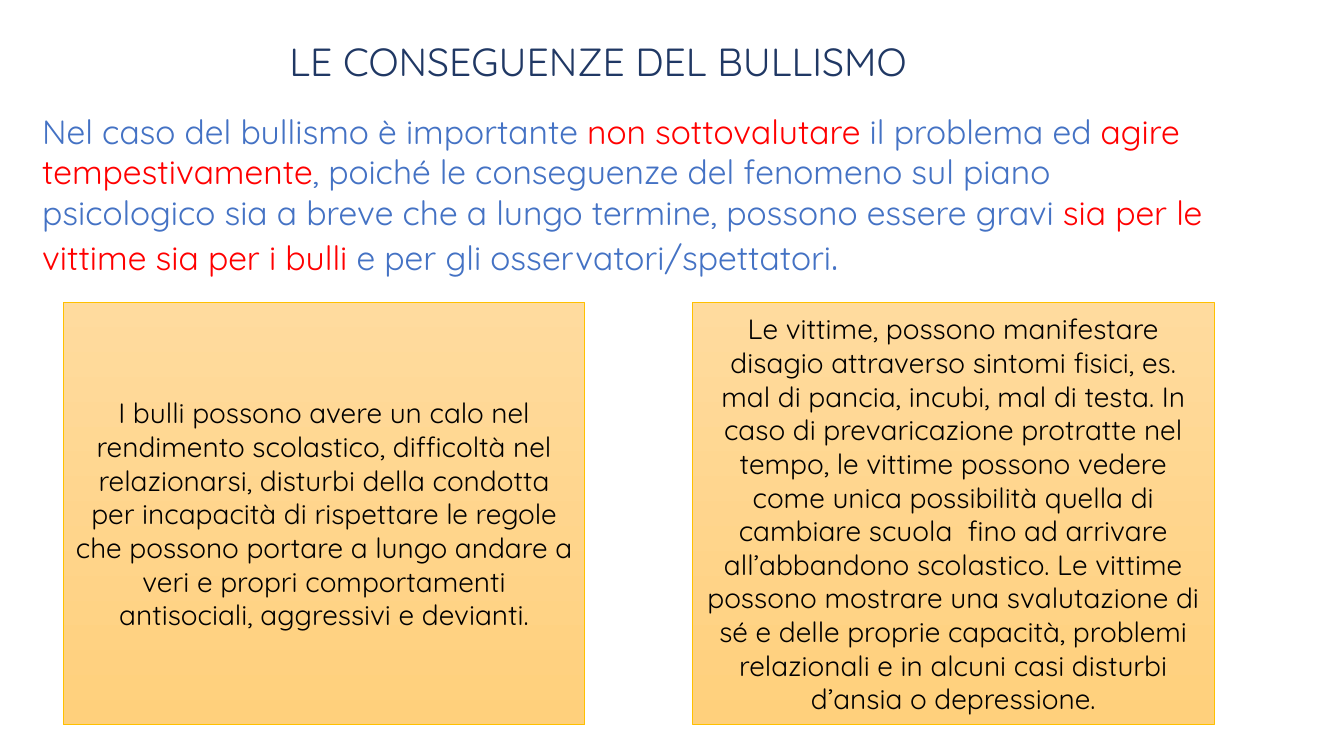
from pptx import Presentation
from pptx.dml.color import RGBColor
from pptx.enum.shapes import MSO_SHAPE
from pptx.enum.text import MSO_ANCHOR, MSO_AUTO_SIZE, PP_ALIGN
from pptx.util import Inches, Pt

RECTANGLE = MSO_SHAPE.RECTANGLE
LEFT, CENTER = PP_ALIGN.LEFT, PP_ALIGN.CENTER
TOP, MIDDLE = MSO_ANCHOR.TOP, MSO_ANCHOR.MIDDLE
NO_AUTOFIT = MSO_AUTO_SIZE.NONE
TITLE_ONLY = 5

FONT = "Quicksand"
NAVY, BLUE, RED, BLACK = "203864", "4472C4", "FF0000", "000000"
GRADIENT = ("FFDB9E", "FFD07C")
GOLD = "FFC000"

TITLE = "LE CONSEGUENZE DEL BULLISMO"
INTRO = [
    ("Nel caso del bullismo è importante ", BLUE, 24),
    ("non sottovalutare ", RED, 24),
    ("il problema ed ", BLUE, 24),
    ("agire tempestivamente", RED, 24),
    (", poiché le conseguenze del fenomeno sul piano psicologico sia a breve "
     "che a lungo termine, possono essere gravi ", BLUE, 24),
    ("sia per le vittime sia per i bulli ", RED, 24),
    ("e per gli osservatori/spettatori", BLUE, 24),
    (".", BLUE, 28),
]
BULLIES = [
    "I bulli possono avere un calo nel rendimento scolastico, difficoltà nel "
    "relazionarsi, disturbi della condotta per incapacità di rispettare le regole",
    "che possono portare a lungo andare a veri e propri comportamenti "
    "antisociali, aggressivi e devianti.",
]
VICTIMS = [
    "Le vittime, possono manifestare disagio attraverso sintomi fisici, es. mal "
    "di pancia, incubi, mal di testa. In caso di prevaricazione protratte nel "
    "tempo, le vittime possono vedere come unica possibilità quella di cambiare "
    "scuola  fino ad arrivare all’abbandono scolastico. Le vittime possono "
    "mostrare una svalutazione di sé e delle proprie capacità, problemi "
    "relazionali e in alcuni casi disturbi d’ansia o depressione.",
]


def color(value):
    return RGBColor.from_string(value)


def write(frame, paragraphs, align=LEFT, anchor=TOP):
    """Fill a text frame with paragraphs of (text, colour, size) spans."""
    layout = {"word_wrap": True, "auto_size": NO_AUTOFIT, "vertical_anchor": anchor}
    for name, value in layout.items():
        setattr(frame, name, value)
    for index, spans in enumerate(paragraphs):
        para = frame.add_paragraph() if index else frame.paragraphs[0]
        para.alignment = align
        for text, tint, size in spans:
            span = para.add_run()
            span.text = text
            for name, value in {"name": FONT, "size": Pt(size)}.items():
                setattr(span.font, name, value)
            span.font.color.rgb = color(tint)


def add_title(page, left, top, width, height):
    title = page.shapes.title
    place = {"left": left, "top": top, "width": width, "height": height}
    for name, value in place.items():
        setattr(title, name, Inches(value))
    write(title.text_frame, [[(TITLE, NAVY, 28)]])


def add_intro(page, left, top, width, height):
    box = page.shapes.add_textbox(*map(Inches, (left, top, width, height)))
    write(box.text_frame, [INTRO])


def add_panel(page, paragraphs, left, top, width, height):
    panel = page.shapes.add_shape(RECTANGLE, *map(Inches, (left, top, width, height)))
    panel.shadow.inherit = False
    # Gradient running from top to bottom
    panel.fill.gradient()
    panel.fill.gradient_angle = 270
    for stop, tint in zip(panel.fill.gradient_stops, GRADIENT):
        stop.color.rgb = color(tint)
    panel.line.color.rgb = color(GOLD)
    panel.line.width = Pt(0.5)
    spans = [[(text, BLACK, 20)] for text in paragraphs]
    write(panel.text_frame, spans, CENTER, MIDDLE)


def main():
    deck = Presentation()
    deck.slide_width, deck.slide_height = Inches(13.33), Inches(7.5)
    page = deck.slides.add_slide(deck.slide_layouts[TITLE_ONLY])

    # Heading and introduction
    add_title(page, 2.77, 0.32, 9.47, 0.57)
    add_intro(page, 0.32, 1.05, 11.92, 1.78)

    # Consequences for bullies and for victims, side by side
    for column, paragraphs in enumerate((BULLIES, VICTIMS)):
        add_panel(page, paragraphs, 0.63 + column * 6.24, 3, 5.17, 4.19)

    deck.save("out.pptx")


if __name__ == "__main__":
    main()
